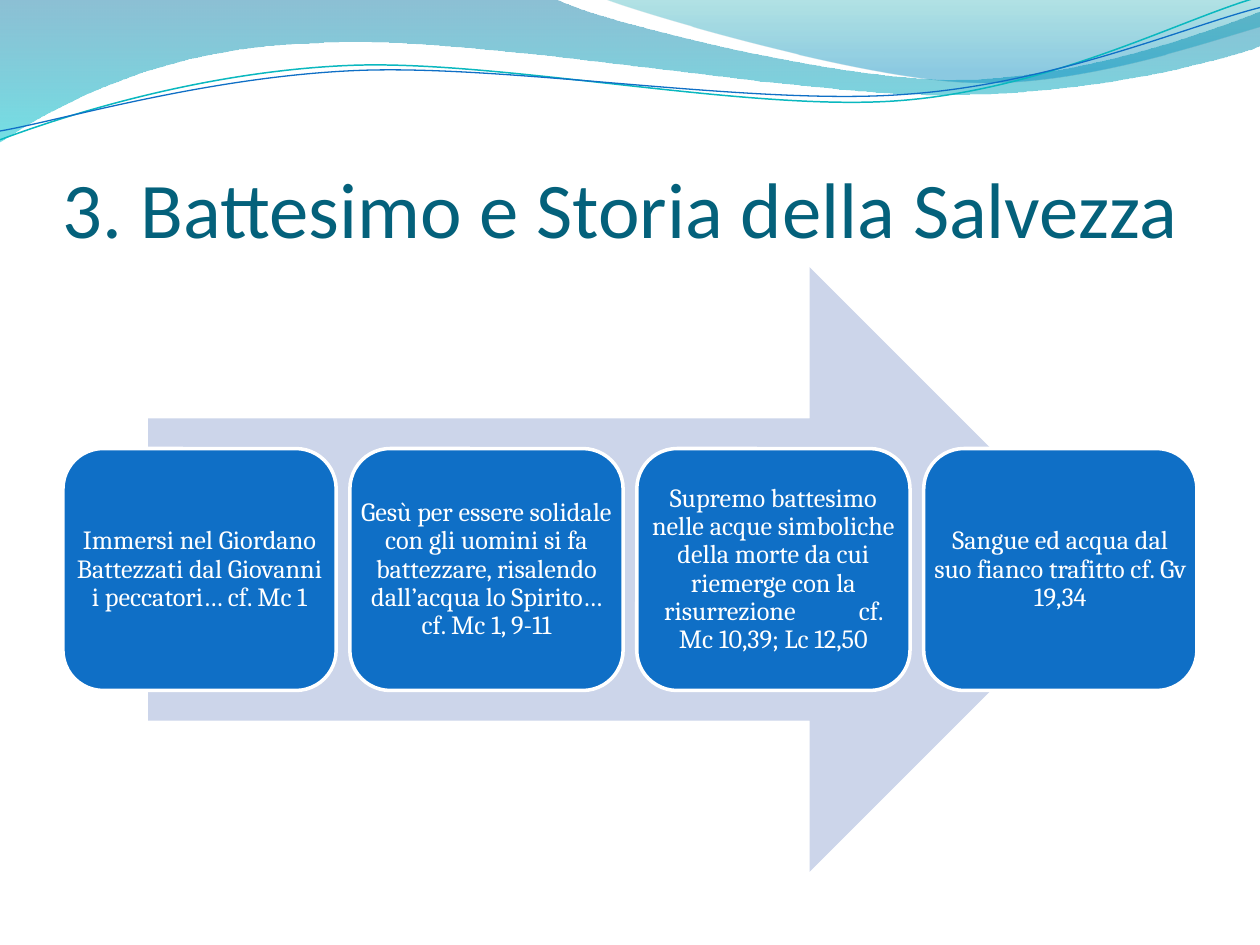
"""Build the slide on baptism and salvation history: waves, title, arrow and four steps."""
from lxml import etree
from pptx import Presentation, util as u
from pptx.dml.color import RGBColor
from pptx.enum import shapes, text
from pptx.oxml.ns import qn


def colour(hex_string):
    return RGBColor.from_string(hex_string)


def add_text(slide, pieces, box, *, font, size, hex_string, align, anchor, insets, spacing=1.0):
    frame = slide.shapes.add_textbox(*box).text_frame
    frame.word_wrap = True
    frame.vertical_anchor = anchor
    frame.margin_left, frame.margin_top, frame.margin_right, frame.margin_bottom = insets
    paragraph = frame.paragraphs[0]
    paragraph.alignment = align
    paragraph.line_spacing = spacing
    for piece in pieces:
        run = paragraph.add_run()
        run.text = piece
        run.font.name = font
        run.font.size = u.Pt(size)
        run.font.color.rgb = colour(hex_string)
        if piece == " ":
            run.font._element.set("spc", "3270")


presentation = Presentation()
presentation.slide_width, presentation.slide_height = u.Inches(10), u.Inches(7.5)
slide = presentation.slides.add_slide(presentation.slide_layouts[6])
column = presentation.slide_width / 10
row = presentation.slide_height / 7.5

BANDS_AND_LINES = [
    {"start": (0, 0), "stops": [(0, "0074A1", 45), (1, "00C6CF", 55)], "steps": [
        (4.4, -0.01), (4.76, 0.17, 6.64, 0.63, 7.58, 0.63), (8.53, 0.63, 9.58, 0.26, 10, 0.09),
        (10.01, 0.36), (9.83, 0.44, 8.7, 0.76, 7.46, 0.75), (6.22, 0.75, 3.82, 0.28, 2.57, 0.34),
        (1.29, 0.36, 0.46, 0.83, -0.01, 1.13), (0, 0)]},
    {"start": (4.79, -0.01), "stops": [(0, "00A1A9", 30), (0.8, "008BBF", 45)], "steps": [
        (5.09, 0.11, 6.82, 0.62, 7.69, 0.65), (8.56, 0.69, 9.61, 0.32, 10, 0.21), (10, 0),
        (4.79, -0.01)]},
    {"start": (0, 1.11), "line": ("0AB8BF", 0.85), "steps": [
        (0.48, 0.93, 1.58, 0.57, 2.77, 0.52), (3.95, 0.47, 5.93, 0.89, 7.13, 0.8),
        (8.33, 0.71, 9.38, 0.15, 9.98, -0.02)]},
    {"start": (0, 1.04), "line": ("0F6FC6", 0.75), "steps": [
        (0.47, 0.96, 1.64, 0.61, 2.83, 0.56), (4.03, 0.51, 5.97, 0.84, 7.17, 0.75),
        (8.36, 0.67, 9.41, 0.21, 10, 0.06)]},
]

for wave in BANDS_AND_LINES:
    points = [(step[i] * column, step[i + 1] * row)
              for step in wave["steps"] for i in range(0, len(step), 2)]
    builder = slide.shapes.build_freeform(wave["start"][0] * column, wave["start"][1] * row)
    builder.add_line_segments(points, close="stops" in wave)
    shape = builder.convert_to_shape()
    shape.shadow.inherit = False
    segments = iter(list(shape._element.spPr.iter(qn("a:lnTo"))))
    for step in wave["steps"]:
        segment = next(segments)
        if len(step) == 6:
            curve = etree.Element(qn("a:cubicBezTo"))
            segment.addprevious(curve)
            for part in (segment, next(segments), next(segments)):
                curve.append(part[0])
                part.getparent().remove(part)
    if "line" in wave:
        hex_string, line_width = wave["line"]
        shape.fill.background()
        shape.line.color.rgb = colour(hex_string)
        shape.line.width = u.Pt(line_width)
        continue
    shape.line.fill.background()
    shape.fill.gradient()
    shape.fill.gradient_angle = 270
    for stop, (position, hex_string, opacity) in zip(shape.fill.gradient_stops, wave["stops"]):
        stop.position = position
        stop.color.rgb = colour(hex_string)
    for tint, (_, _, opacity) in zip(shape._element.spPr.iter(qn("a:srgbClr")), wave["stops"]):
        etree.SubElement(tint, qn("a:alpha")).set("val", str(opacity * 1000))

margin = 0.5 * column
content_width = presentation.slide_width - 2 * margin
add_text(slide, ["3. Battesimo e Storia della Salvezza"],
         [int(n) for n in (margin, 0.77 * row, content_width, 1.25 * row)],
         font="Calibri", size=45, hex_string="04617B", align=text.PP_ALIGN.LEFT,
         anchor=text.MSO_ANCHOR.BOTTOM, insets=(0, u.Inches(0.05), 0, 0))

arrow_width = 0.85 * content_width
arrow_box = ((presentation.slide_width - arrow_width) / 2, 2.12 * row, arrow_width, 4.8 * row)
arrow = slide.shapes.add_shape(shapes.MSO_SHAPE.RIGHT_ARROW, *[int(n) for n in arrow_box])
arrow.shadow.inherit = False
arrow.fill.solid()
arrow.fill.fore_color.rgb = colour("CCD5EA")
arrow.line.fill.background()

STEPS = [
    ["Immersi nel Giordano Battezzati dal Giovanni i peccatori… cf. Mc 1"],
    ["Gesù per essere solidale con gli uomini si fa battezzare, risalendo "
     "dall’acqua lo Spirito… cf. Mc 1, 9-11"],
    ["Supremo battesimo nelle acque simboliche della morte da cui riemerge "
     "con la risurrezione", " ", "cf. Mc 10,39; Lc 12,50"],
    ["Sangue ed acqua dal suo fianco trafitto cf. Gv 19,34"],
]
card_width = content_width / 4.15
card_pitch = 1.05 * card_width

for index, pieces in enumerate(STEPS):
    box = [int(n) for n in (margin + index * card_pitch, 3.56 * row, card_width, 1.92 * row)]
    card = slide.shapes.add_shape(shapes.MSO_SHAPE.ROUNDED_RECTANGLE, *box)
    card.shadow.inherit = False
    card.fill.solid()
    card.fill.fore_color.rgb = colour("0F6FC6")
    card.line.color.rgb = colour("FFFFFF")
    card.line.width = u.Pt(2)
    add_text(slide, pieces, box, font="Cambria", size=15, hex_string="FFFFFF",
             align=text.PP_ALIGN.CENTER, anchor=text.MSO_ANCHOR.MIDDLE,
             insets=[u.Inches(0.06)] * 4, spacing=0.9)

presentation.save("out.pptx")
